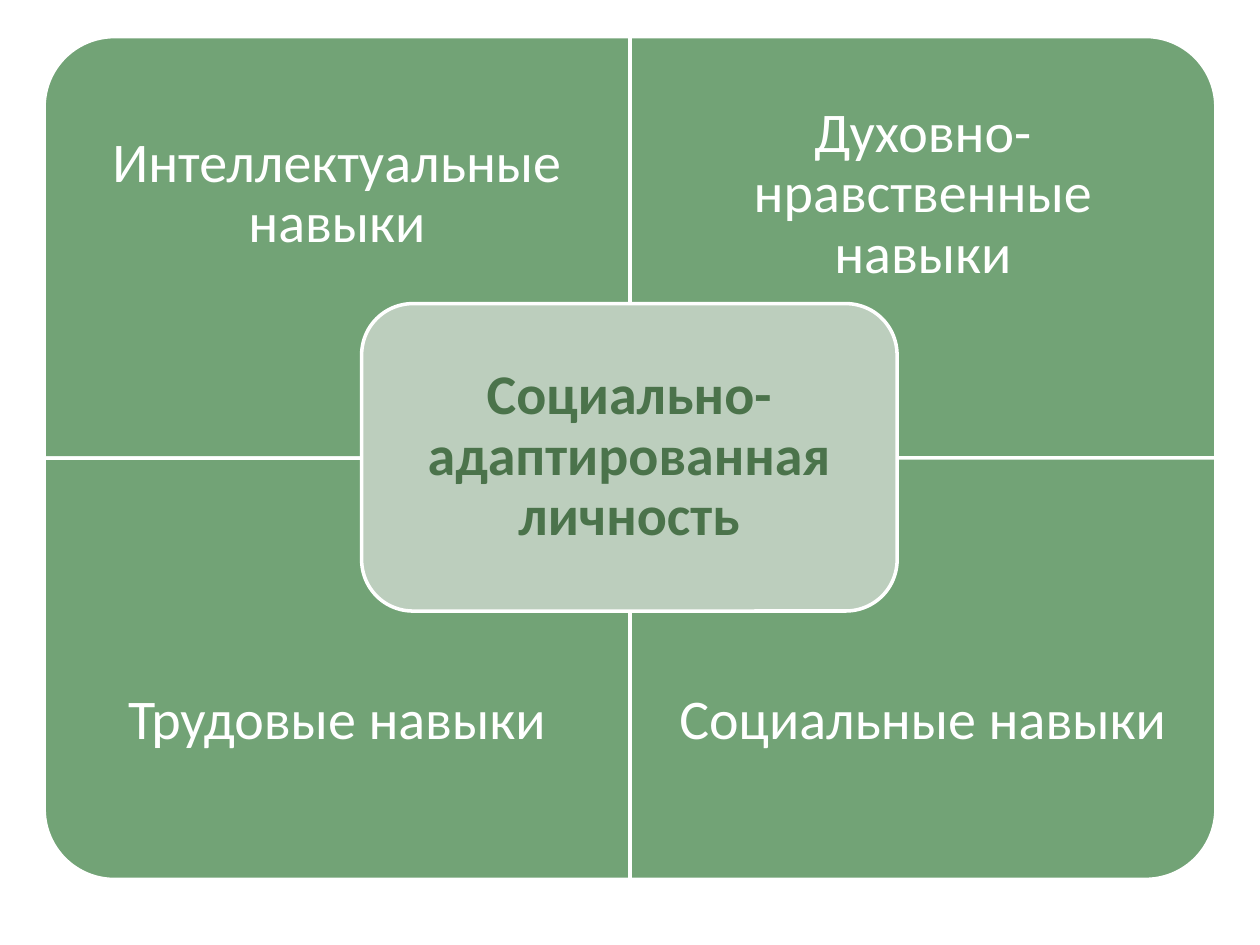
from dataclasses import dataclass

from pptx import Presentation
from pptx.dml.color import RGBColor
from pptx.enum.shapes import MSO_SHAPE
from pptx.enum.text import MSO_ANCHOR, PP_ALIGN
from pptx.util import Inches, Pt


@dataclass(frozen=True)
class Theme:
    quadrant: RGBColor = RGBColor(0x72, 0xA3, 0x76)
    core: RGBColor = RGBColor(0xBC, 0xCE, 0xBD)
    core_text: RGBColor = RGBColor(0x4B, 0x73, 0x4B)
    white: RGBColor = RGBColor(0xFF, 0xFF, 0xFF)
    font: str = "Calibri"
    text_size: Pt = Pt(32)
    outline: Pt = Pt(2)


THEME = Theme()
SKILLS = [
    ["Интеллектуальные навыки", "Духовно-нравственные навыки"],
    ["Трудовые навыки", "Социальные навыки"],
]
CORNER_ROTATIONS = [[270, 0], [180, 90]]


def add_panel(slide, kind, left, top, width, height, fill):
    panel = slide.shapes.add_shape(
        kind, Inches(left), Inches(top), Inches(width), Inches(height)
    )
    panel.shadow.inherit = False
    panel.fill.solid()
    panel.fill.fore_color.rgb = fill
    panel.line.color.rgb = THEME.white
    panel.line.width = THEME.outline
    return panel


def write_label(frame, wording, color, bold=False):
    frame.word_wrap = True
    frame.vertical_anchor = MSO_ANCHOR.MIDDLE
    frame.margin_left = frame.margin_right = Inches(0.25)
    frame.margin_top = frame.margin_bottom = Inches(0.25)
    label = frame.paragraphs[0]
    label.text = wording
    label.alignment = PP_ALIGN.CENTER
    label.line_spacing = 0.9
    label.font.name = THEME.font
    label.font.size = THEME.text_size
    label.font.bold = bold
    label.font.color.rgb = color


def add_quadrant(slide, left, top, width, height, rotation, wording, label_top):
    sideways = rotation % 180 == 90
    panel_width, panel_height = (height, width) if sideways else (width, height)
    panel = add_panel(
        slide,
        MSO_SHAPE.ROUND_1_RECTANGLE,
        left + (width - panel_width) / 2,
        top + (height - panel_height) / 2,
        panel_width,
        panel_height,
        THEME.quadrant,
    )
    panel.rotation = rotation
    label = slide.shapes.add_textbox(
        Inches(left), Inches(label_top), Inches(width), Inches(height * 0.75)
    )
    write_label(label.text_frame, wording, THEME.white)


def add_matrix(slide, left, top, width, height):
    cell_width, cell_height = width / 2, height / 2
    for row, skills in enumerate(SKILLS):
        for column, skill in enumerate(skills):
            cell_top = top + row * cell_height
            add_quadrant(
                slide,
                left + column * cell_width,
                cell_top,
                cell_width,
                cell_height,
                CORNER_ROTATIONS[row][column],
                skill,
                cell_top + row * cell_height * 0.25,
            )


def add_core(slide, left, top, width, height):
    core = add_panel(
        slide, MSO_SHAPE.ROUNDED_RECTANGLE, left, top, width, height, THEME.core
    )
    write_label(
        core.text_frame,
        "Социально-адаптированная личность",
        THEME.core_text,
        bold=True,
    )


def main():
    deck = Presentation()
    deck.slide_width, deck.slide_height = Inches(10), Inches(7.5)
    slide = deck.slides.add_slide(deck.slide_layouts.get_by_name("Blank"))
    add_matrix(slide, 0.35, 0.29, 9.3, 6.69)
    add_core(slide, 2.87, 2.41, 4.25, 2.44)
    deck.save("out.pptx")


if __name__ == "__main__":
    main()
